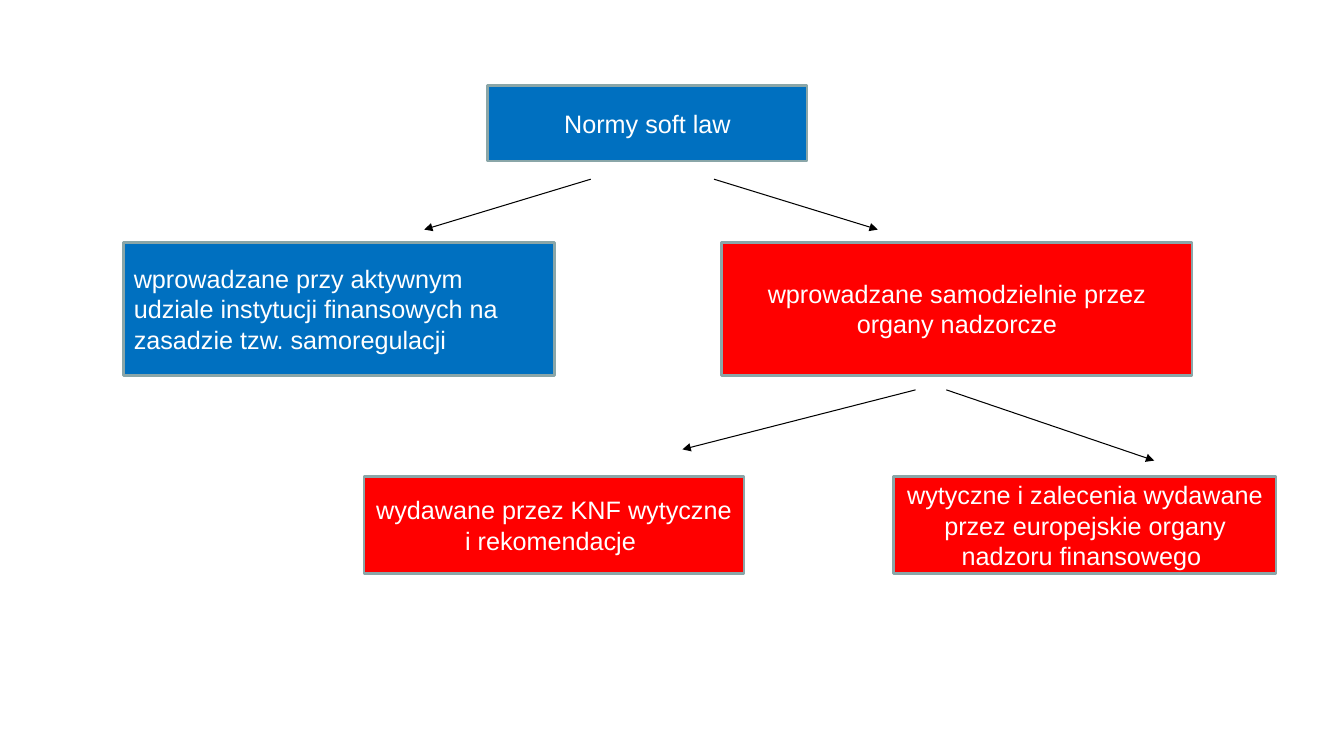
from lxml.etree import SubElement
from pptx import Presentation
from pptx.dml.color import RGBColor
from pptx.enum.shapes import MSO_CONNECTOR, MSO_SHAPE
from pptx.enum.text import MSO_ANCHOR, PP_ALIGN
from pptx.oxml.ns import qn
from pptx.util import Pt

BLUE = RGBColor(0x00, 0x70, 0xC0)
RED = RGBColor(0xFF, 0x00, 0x00)
BORDER = RGBColor(0x8A, 0xA6, 0xA8)
WHITE = RGBColor(0xFF, 0xFF, 0xFF)
BLACK = RGBColor(0x00, 0x00, 0x00)

NORM_FONT = {"name": "Arial", "size": Pt(18)}

# text, fill, alignment, (left, top, width, height)
NORMS = [
    ("Normy soft law", BLUE, PP_ALIGN.CENTER, (348.5, 61, 228, 54)),
    ("wprowadzane przy aktywnym udziale instytucji finansowych na zasadzie "
     "tzw. samoregulacji", BLUE, PP_ALIGN.LEFT, (88.5, 173, 307.5, 95)),
    ("wprowadzane samodzielnie przez organy nadzorcze",
     RED, PP_ALIGN.CENTER, (515.5, 173, 336, 95)),
    ("wydawane przez KNF wytyczne i rekomendacje ",
     RED, PP_ALIGN.CENTER, (260, 340.5, 271.5, 69)),
    ("wytyczne i zalecenia wydawane przez europejskie organy nadzoru "
     "finansowego ", RED, PP_ALIGN.CENTER, (638.5, 340.5, 273, 69)),
]

# start x, start y, end x, end y
BRANCHES = [
    (422, 128, 303, 164),
    (510, 128, 627, 164),
    (654, 278.5, 487.5, 321),
    (676, 278.5, 824.5, 329),
]


def set_format(target, values):
    for attribute, value in values.items():
        setattr(target, attribute, value)


def add_norm(slide, text, fill, alignment, bounds):
    norm = slide.shapes.add_shape(MSO_SHAPE.RECTANGLE, *map(Pt, bounds))
    norm.shadow.inherit = False
    norm.fill.solid()
    norm.fill.fore_color.rgb = fill
    norm.line.color.rgb = BORDER
    norm.line.width = Pt(2)
    frame = norm.text_frame
    set_format(frame, {"text": text, "word_wrap": True,
                       "vertical_anchor": MSO_ANCHOR.MIDDLE})
    paragraph = frame.paragraphs[0]
    paragraph.alignment = alignment
    wording = paragraph.runs[0]
    set_format(wording.font, NORM_FONT)
    wording.font.color.rgb = WHITE


def add_branch(slide, ends):
    """Draw an arrow whose head is at the second point."""
    branch = slide.shapes.add_connector(MSO_CONNECTOR.STRAIGHT, *map(Pt, ends))
    branch.line.color.rgb = BLACK
    branch.line.width = Pt(0.75)
    properties = branch._element.spPr
    SubElement(properties.find(qn("a:ln")), qn("a:tailEnd"), type="triangle")
    SubElement(properties, qn("a:effectLst"))


def main():
    presentation = Presentation()
    set_format(presentation, {"slide_width": Pt(960), "slide_height": Pt(540)})
    slide = presentation.slides.add_slide(presentation.slide_layouts[6])
    for norm in NORMS:
        add_norm(slide, *norm)
    for ends in BRANCHES:
        add_branch(slide, ends)
    presentation.save("out.pptx")


if __name__ == "__main__":
    main()
